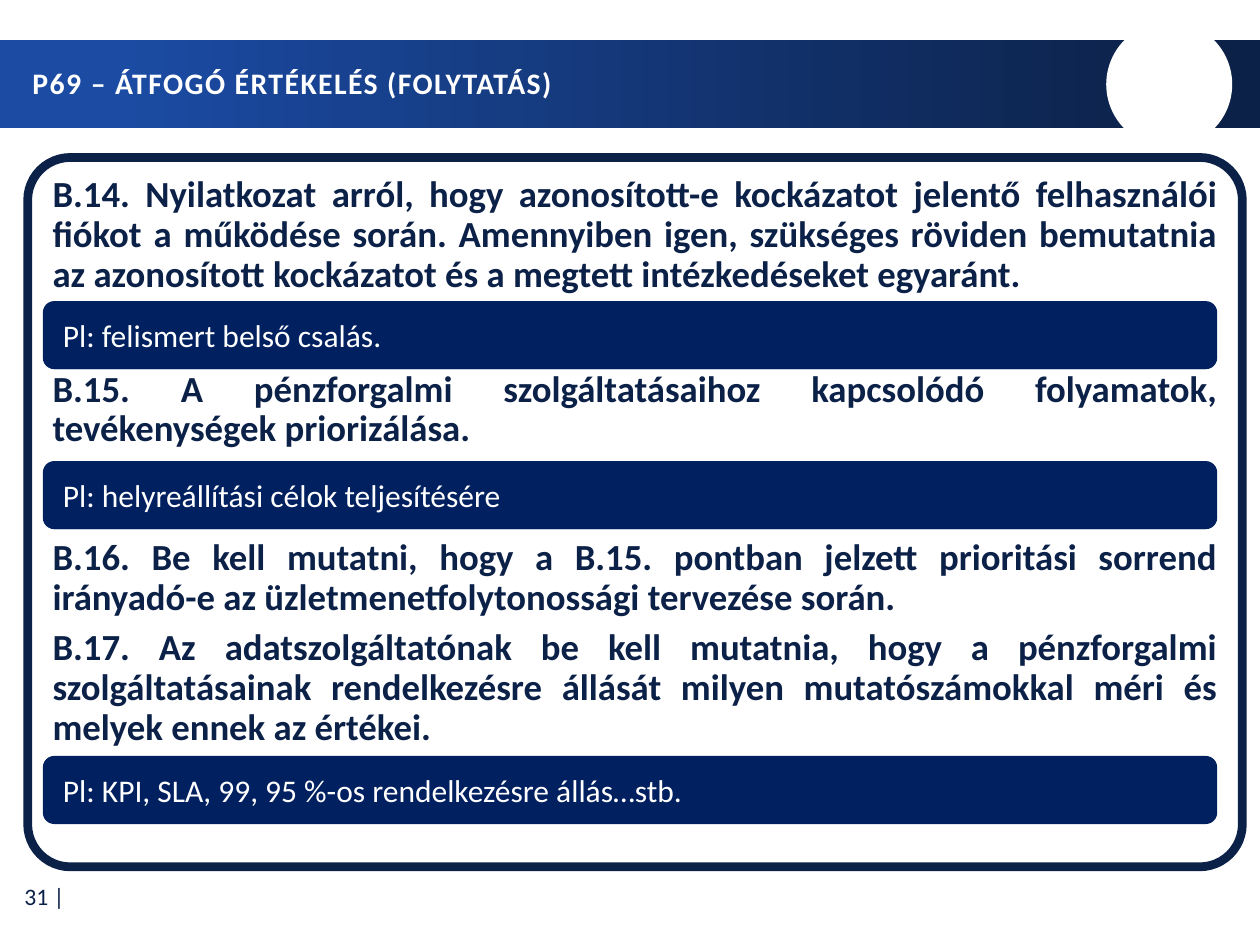
from dataclasses import dataclass

from pptx import Presentation
from pptx.dml.color import RGBColor
from pptx.enum.shapes import MSO_SHAPE as Preset
from pptx.enum.text import MSO_ANCHOR as Anchor, PP_ALIGN as Align
from pptx.util import Inches, Pt


@dataclass(frozen=True)
class Theme:
    font: str = "Calibri"
    navy: str = "0C2148"
    blue: str = "1B4BA3"
    answer: str = "002060"
    white: str = "FFFFFF"
    title_size: float = 17
    question_size: float = 21
    answer_size: float = 18
    number_size: float = 13.5
    line_spacing: float = 0.9


@dataclass(frozen=True)
class Box:
    left: float
    top: float
    width: float
    height: float

    def lengths(self) -> list:
        return [Inches(v) for v in (self.left, self.top, self.width, self.height)]


@dataclass(frozen=True)
class Question:
    text: str
    space_before: float = 0


@dataclass(frozen=True)
class Answer:
    text: str
    top: float


THEME = Theme()

# The wide gaps leave room for the answer bars.
QUESTIONS = [
    Question("B.14. Nyilatkozat arról, hogy azonosított-e kockázatot jelentő "
             "felhasználói fiókot a működése során. Amennyiben igen, szükséges "
             "röviden bemutatnia az azonosított kockázatot és a megtett "
             "intézkedéseket egyaránt."),
    Question("B.15. A pénzforgalmi szolgáltatásaihoz kapcsolódó folyamatok, "
             "tevékenységek priorizálása.", 43),
    Question("B.16. Be kell mutatni, hogy a B.15. pontban jelzett prioritási "
             "sorrend irányadó-e az üzletmenetfolytonossági tervezése során.", 51),
    Question("B.17. Az adatszolgáltatónak be kell mutatnia, hogy a pénzforgalmi "
             "szolgáltatásainak rendelkezésre állását milyen mutatószámokkal méri "
             "és melyek ennek az értékei.", 6),
]

ANSWERS = [
    Answer("Pl: felismert belső csalás.", 2.39),
    Answer("Pl: helyreállítási célok teljesítésére", 3.66),
    Answer("Pl: KPI, SLA, 99, 95 %-os rendelkezésre állás…stb.", 6),
]


def add_preset(slide, preset, box: Box, fill: str | None = None):
    shape = slide.shapes.add_shape(preset, *box.lengths())
    shape.shadow.inherit = False
    shape.line.fill.background()
    if fill:
        shape.fill.solid()
        shape.fill.fore_color.rgb = RGBColor.from_string(fill)
    else:
        shape.fill.background()
    return shape


def write(paragraph, text: str, *, size: float, color: str, bold: bool = False,
          align=Align.LEFT, space_before: float = 0, tracking: float = 0) -> None:
    paragraph.alignment = align
    paragraph.line_spacing = THEME.line_spacing
    paragraph.space_before = Pt(space_before)
    run = paragraph.add_run()
    run.text = text
    run.font.name = THEME.font
    run.font.size = Pt(size)
    run.font.bold = bold
    run.font.color.rgb = RGBColor.from_string(color)
    if tracking:
        run.font._element.set("spc", str(round(tracking * 100)))


def add_label(slide, box: Box, text: str, **text_format) -> None:
    frame = slide.shapes.add_textbox(*box.lengths()).text_frame
    frame.word_wrap = True
    frame.vertical_anchor = Anchor.MIDDLE
    write(frame.paragraphs[0], text, **text_format)


def add_header(slide) -> None:
    band = add_preset(slide, Preset.RECTANGLE, Box(0, 0.32, 10, 0.7))
    band.fill.gradient()
    band.fill.gradient_angle = 0
    stops = ((0.09, THEME.blue), (0.95, THEME.navy))
    for stop, (position, color) in zip(band.fill.gradient_stops, stops):
        stop.position = position
        stop.color.rgb = RGBColor.from_string(color)
    add_preset(slide, Preset.OVAL, Box(8.78, 0.17, 1, 1), THEME.white)
    add_label(slide, Box(0.16, 0.34, 8.9, 0.67), "P69 – ÁTFOGÓ ÉRTÉKELÉS (FOLYTATÁS)",
              size=THEME.title_size, color=THEME.white, bold=True, tracking=0.8)


def add_questions(slide, questions: list[Question]) -> None:
    panel = add_preset(slide, Preset.ROUNDED_RECTANGLE, Box(0.22, 1.25, 9.64, 5.63))
    panel.adjustments[0] = 0.06
    panel.line.color.rgb = RGBColor.from_string(THEME.navy)
    panel.line.width = Pt(5)
    frame = panel.text_frame
    frame.word_wrap = True
    frame.vertical_anchor = Anchor.TOP
    for index, question in enumerate(questions):
        paragraph = frame.add_paragraph() if index else frame.paragraphs[0]
        write(paragraph, question.text, size=THEME.question_size, color=THEME.navy,
              bold=True, align=Align.JUSTIFY, space_before=question.space_before)


def add_answer(slide, answer: Answer) -> None:
    add_preset(slide, Preset.ROUNDED_RECTANGLE,
               Box(0.34, answer.top, 9.32, 0.54), THEME.answer)
    body = add_preset(slide, Preset.RECTANGLE,
                      Box(0.43, answer.top + 0.03, 9.14, 0.51), THEME.answer)
    frame = body.text_frame
    frame.word_wrap = True
    frame.vertical_anchor = Anchor.MIDDLE
    frame.margin_left = frame.margin_right = Inches(0.07)
    frame.margin_top = frame.margin_bottom = Inches(0.07)
    write(frame.paragraphs[0], answer.text, size=THEME.answer_size, color=THEME.white)


def main() -> None:
    deck = Presentation()
    deck.slide_width, deck.slide_height = Inches(10), Inches(7.5)
    slide = deck.slides.add_slide(deck.slide_layouts[6])
    add_label(slide, Box(0.01, 6.94, 0.6, 0.37), "31 |",
              size=THEME.number_size, color=THEME.navy, align=Align.RIGHT)
    add_header(slide)
    add_questions(slide, QUESTIONS)
    for answer in ANSWERS:
        add_answer(slide, answer)
    deck.save("out.pptx")


if __name__ == "__main__":
    main()
